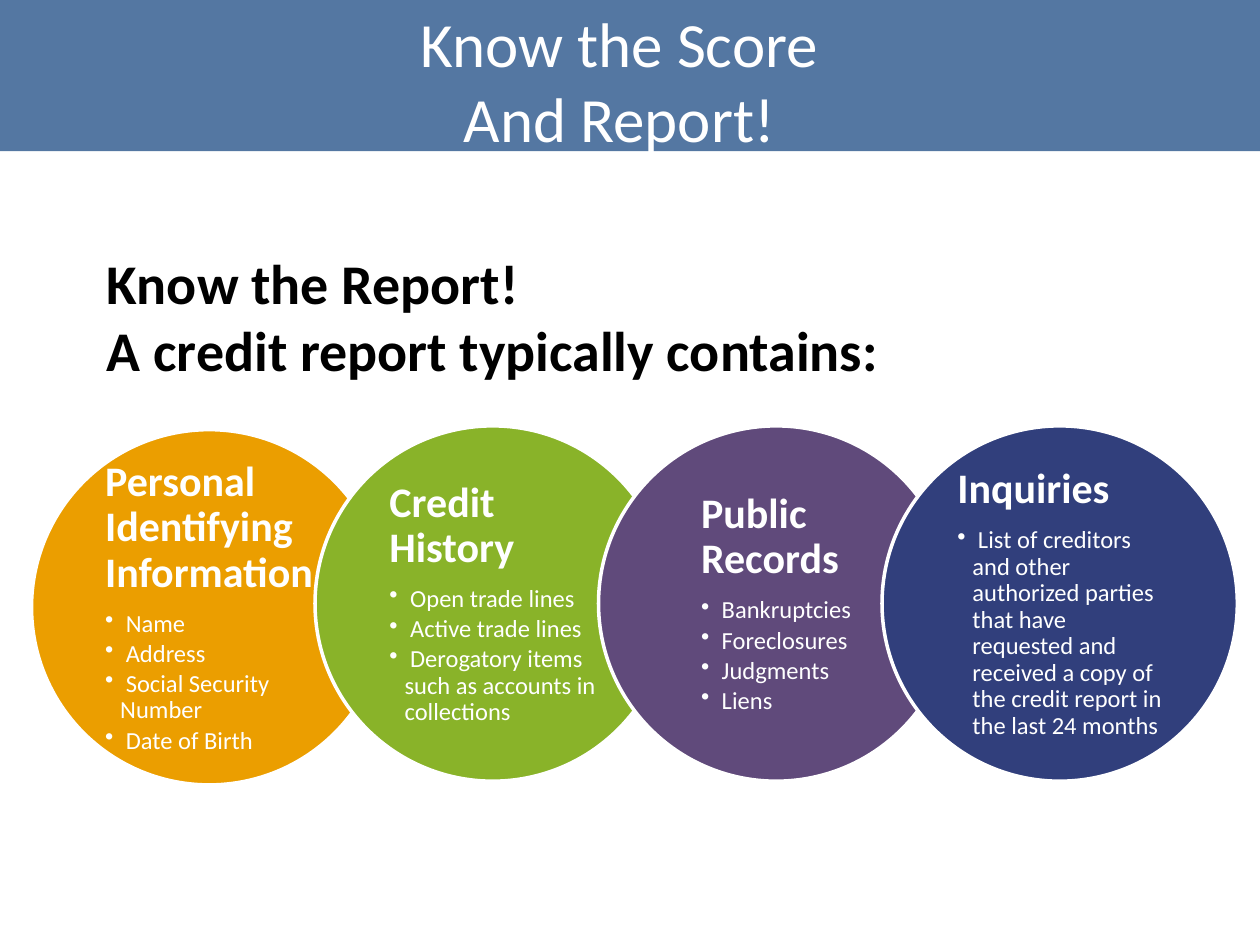
from dataclasses import dataclass

from lxml import etree
from pptx import Presentation
from pptx.dml.color import RGBColor
from pptx.enum.shapes import MSO_SHAPE
from pptx.enum.text import MSO_ANCHOR, PP_ALIGN
from pptx.oxml.ns import qn
from pptx.util import Inches, Pt

RECTANGLE = MSO_SHAPE.RECTANGLE
OVAL = MSO_SHAPE.OVAL
MIDDLE = MSO_ANCHOR.MIDDLE
CENTER = PP_ALIGN.CENTER

WHITE = RGBColor(0xFF, 0xFF, 0xFF)
BLACK = RGBColor(0x00, 0x00, 0x00)
BANNER_BLUE = RGBColor(0x37, 0x60, 0x92)
ORANGE = RGBColor(0xEB, 0x9E, 0x00)
GREEN = RGBColor(0x89, 0xB3, 0x29)
PURPLE = RGBColor(0x60, 0x4A, 0x7B)
NAVY = RGBColor(0x31, 0x3F, 0x7C)

FONT = "Calibri"
CIRCLE_SIZE = 2.82
CIRCLE_LEFT = 0.25
CIRCLE_PITCH = 2.25
TEXT_INSET = 0.41
TEXT_SIZE = CIRCLE_SIZE - 2 * TEXT_INSET


@dataclass
class ReportSection:
    heading: str
    items: list[str]
    color: RGBColor
    top: float = 3.38


SECTIONS = [
    ReportSection("Personal Identifying Information",
                  ["Name", "Address", "Social Security Number", "Date of Birth"],
                  ORANGE, top=3.41),
    ReportSection("Credit History",
                  ["Open trade lines", "Active trade lines",
                   "Derogatory items such as accounts in collections"], GREEN),
    ReportSection("Public Records",
                  ["Bankruptcies", "Foreclosures", "Judgments", "Liens"], PURPLE),
    ReportSection("Inquiries",
                  ["List of creditors and other authorized parties that have "
                   "requested and received a copy of the credit report in the "
                   "last 24 months"], NAVY),
]


def add_plain_shape(page, kind, left: float, top: float, width: float,
                    height: float, color: RGBColor):
    shape = page.shapes.add_shape(kind, Inches(left), Inches(top),
                                  Inches(width), Inches(height))
    shape.shadow.inherit = False
    shape.fill.solid()
    shape.fill.fore_color.rgb = color
    shape.line.fill.background()
    return shape


def add_text_box(page, left: float, top: float, width: float, height: float,
                 text: str):
    box = page.shapes.add_textbox(Inches(left), Inches(top),
                                  Inches(width), Inches(height))
    frame = box.text_frame
    frame.word_wrap = True
    frame.text = text
    return frame


def format_paragraph(paragraph, size: float, color: RGBColor,
                     bold: bool = False) -> None:
    for span in paragraph.runs:
        span.font.name = FONT
        span.font.size = Pt(size)
        span.font.bold = bold
        span.font.color.rgb = color


def add_bullet(paragraph) -> None:
    properties = paragraph._p.get_or_add_pPr()
    properties.set("marL", str(Inches(0.12)))
    properties.set("indent", str(-Inches(0.12)))
    etree.SubElement(properties, qn("a:buChar")).set("char", "•")


def add_banner(page) -> None:
    banner = add_plain_shape(page, RECTANGLE, -0.01, 0, 10.01, 1.2, BANNER_BLUE)
    color = banner.fill._xPr.find(".//" + qn("a:srgbClr"))
    etree.SubElement(color, qn("a:alpha")).set("val", "85000")

    frame = add_text_box(page, 1.5, 0.05, 6.83, 1.17,
                         "Know the Score\nAnd Report!")
    frame.vertical_anchor = MIDDLE
    for paragraph in frame.paragraphs:
        paragraph.alignment = CENTER
        format_paragraph(paragraph, 36, WHITE)


def add_section(page, section: ReportSection, left: float) -> None:
    circle = add_plain_shape(page, OVAL, left, section.top,
                             CIRCLE_SIZE, CIRCLE_SIZE, section.color)
    circle.line.color.rgb = WHITE
    circle.line.width = Pt(2)

    # One space follows each bullet, so wrapped lines hang slightly left
    lines = [section.heading] + [" " + item for item in section.items]
    frame = add_text_box(page, left + TEXT_INSET, section.top + TEXT_INSET,
                         TEXT_SIZE, TEXT_SIZE, "\n".join(lines))
    frame.vertical_anchor = MIDDLE
    frame.margin_left = frame.margin_right = Inches(0.16)
    frame.margin_top = frame.margin_bottom = Inches(0.03)
    # Centre the left-aligned text block across the circle
    frame._txBody.bodyPr.set("anchorCtr", "1")

    heading, *items = frame.paragraphs
    heading.line_spacing = 0.9
    heading.space_after = Pt(8.4)
    format_paragraph(heading, 24, WHITE, bold=True)
    for item in items:
        item.level = 1
        item.line_spacing = 0.9
        item.space_after = Pt(2.1)
        add_bullet(item)
        format_paragraph(item, 14, WHITE)


def main() -> None:
    deck = Presentation()
    deck.slide_width = Inches(10)
    deck.slide_height = Inches(7.5)
    page = deck.slides.add_slide(deck.slide_layouts[6])

    # Title banner
    add_banner(page)

    # Overlapping circles
    for index, section in enumerate(SECTIONS):
        add_section(page, section, CIRCLE_LEFT + index * CIRCLE_PITCH)

    # Introduction
    intro = add_text_box(page, 0.75, 1.92, 8.58, 1.18,
                         "Know the Report!\nA credit report typically contains:")
    for paragraph in intro.paragraphs:
        format_paragraph(paragraph, 32, BLACK, bold=True)

    deck.save("out.pptx")


if __name__ == "__main__":
    main()
